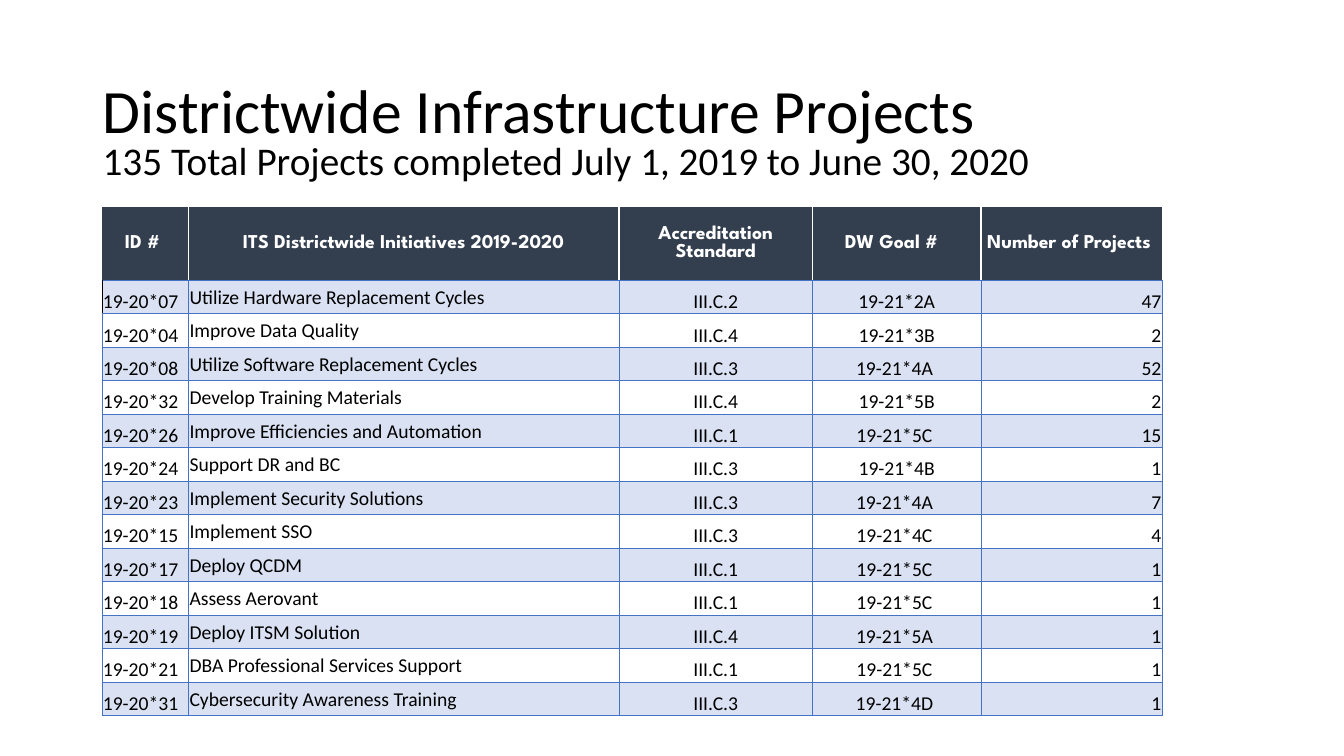
from lxml import etree
from pptx import Presentation
from pptx import util as u
from pptx.dml.color import RGBColor
from pptx.enum import text
from pptx.oxml import ns

BLACK = RGBColor(0x00, 0x00, 0x00)
WHITE = RGBColor(0xFF, 0xFF, 0xFF)
NAVY = RGBColor(0x33, 0x3F, 0x4F)
BLUE = RGBColor(0x44, 0x72, 0xC4)
BAND = RGBColor(0xD9, 0xE1, 0xF2)

LEFT, CENTER, RIGHT = text.PP_ALIGN.LEFT, text.PP_ALIGN.CENTER, text.PP_ALIGN.RIGHT
MIDDLE, BOTTOM = text.MSO_ANCHOR.MIDDLE, text.MSO_ANCHOR.BOTTOM

# Column width, alignment and anchor of the body cells
COLUMNS = [
    (0.86, LEFT, BOTTOM),
    (4.27, LEFT, MIDDLE),
    (1.92, CENTER, BOTTOM),
    (1.67, CENTER, BOTTOM),
    (1.80, RIGHT, BOTTOM),
]
HEADER = ["ID # ", "ITS Districtwide Initiatives 2019-2020",
          "Accreditation Standard", "DW Goal #  ", "Number of Projects "]
PROJECTS = [
    ("19-20*07", "Utilize Hardware Replacement Cycles ", "III.C.2", "19-21*2A", 47),
    ("19-20*04", "Improve Data Quality ", "III.C.4", "19-21*3B", 2),
    ("19-20*08 ", "Utilize Software Replacement Cycles ", "III.C.3", "19-21*4A ", 52),
    ("19-20*32", "Develop Training Materials ", "III.C.4", "19-21*5B", 2),
    ("19-20*26 ", "Improve Efficiencies and Automation ", "III.C.1", "19-21*5C ", 15),
    ("19-20*24", "Support DR and BC ", "III.C.3", "19-21*4B", 1),
    ("19-20*23 ", "Implement Security Solutions ", "III.C.3", "19-21*4A ", 7),
    ("19-20*15 ", "Implement SSO ", "III.C.3", "19-21*4C ", 4),
    ("19-20*17 ", "Deploy QCDM ", "III.C.1", "19-21*5C ", 1),
    ("19-20*18 ", "Assess Aerovant ", "III.C.1", "19-21*5C ", 1),
    ("19-20*19 ", "Deploy ITSM Solution ", "III.C.4", "19-21*5A ", 1),
    ("19-20*21 ", "DBA Professional Services Support  ", "III.C.1", "19-21*5C ", 1),
    ("19-20*31 ", "Cybersecurity Awareness Training ", "III.C.3", "19-21*4D ", 1),
]
TABLE_HEIGHT, HEADER_HEIGHT = 5.05, 0.73


class SlideBuilder:
    font = "Calibri"
    header_font = "League Spartan"
    cell_size = 14

    def __init__(self, prs):
        self.s = prs.slides.add_slide(prs.slide_layouts[6])

    def style(self, p, size, font, color, bold=False):
        for r in p.runs:
            r.font.size = u.Pt(size)
            r.font.name = font
            r.font.bold = bold
            r.font.color.rgb = color

    def textbox(self, words, box, size, anchor, before=0):
        sp = self.s.shapes.add_textbox(*(u.Inches(v) for v in box))
        tf = sp.text_frame
        tf.word_wrap = True
        tf.vertical_anchor = anchor
        p = tf.paragraphs[0]
        p.text = words
        p.line_spacing = 0.9
        p.space_before = u.Pt(before)
        self.style(p, size, self.font, BLACK)

    def borders(self, cell, lines):
        tcPr = cell._tc.get_or_add_tcPr()
        for i, (side, (color, width)) in enumerate(lines.items()):
            ln = etree.Element(ns.qn(f"a:ln{side}"), w=str(u.Pt(width)))
            fill = etree.SubElement(ln, ns.qn("a:solidFill"))
            etree.SubElement(fill, ns.qn("a:srgbClr"), val=str(color))
            tcPr.insert(i, ln)

    def cell(self, cell, words, align, anchor, fill, lines, header):
        cell.margin_left = cell.margin_right = cell.margin_top = u.Inches(0.01)
        cell.margin_bottom = 0
        cell.vertical_anchor = anchor
        if fill is None:
            cell.fill.background()
        else:
            cell.fill.solid()
            cell.fill.fore_color.rgb = fill
        self.borders(cell, lines)
        p = cell.text_frame.paragraphs[0]
        p.text = str(words)
        p.alignment = align
        if header:
            self.style(p, self.cell_size, self.header_font, WHITE, True)
        else:
            self.style(p, self.cell_size, self.font, BLACK)

    def table(self, left, top):
        rows = [HEADER] + PROJECTS
        width = sum(c[0] for c in COLUMNS)
        tbl = self.s.shapes.add_table(
            len(rows), len(COLUMNS), u.Inches(left), u.Inches(top),
            u.Inches(width), u.Inches(TABLE_HEIGHT)).table
        tbl.first_row = tbl.horz_banding = False
        for col, (w, _, _) in zip(tbl.columns, COLUMNS):
            col.width = u.Inches(w)

        body_height = (TABLE_HEIGHT - HEADER_HEIGHT) / len(PROJECTS)
        for i, row in enumerate(rows):
            header = i == 0
            tbl.rows[i].height = u.Inches(HEADER_HEIGHT if header else body_height)
            for j, (words, (_, align, anchor)) in enumerate(zip(row, COLUMNS)):
                lines = dict.fromkeys("LRTB", (BLUE, 0.5))
                fill = BAND if i % 2 else None
                if header:
                    lines.update(dict.fromkeys("LRT", (WHITE, 1)))
                    align, anchor, fill = CENTER, MIDDLE, NAVY
                elif (i, j) == (1, 0):
                    lines["L"] = (BLACK, 0.5)
                self.cell(tbl.cell(i, j), words, align, anchor, fill, lines, header)


def main():
    prs = Presentation()
    prs.slide_width, prs.slide_height = u.Inches(13.33), u.Inches(7.5)
    slide = SlideBuilder(prs)

    # Title and subtitle
    slide.textbox("Districtwide Infrastructure Projects",
                  (0.92, 0.4, 11.5, 1.45), 44, MIDDLE)
    slide.textbox("135 Total Projects completed July 1, 2019 to June 30, 2020",
                  (0.92, 1.36, 9.78, 4.59), 28, text.MSO_ANCHOR.TOP, before=10)

    # Project table
    slide.table(1.01, 2.05)
    prs.save("out.pptx")


if __name__ == "__main__":
    main()
